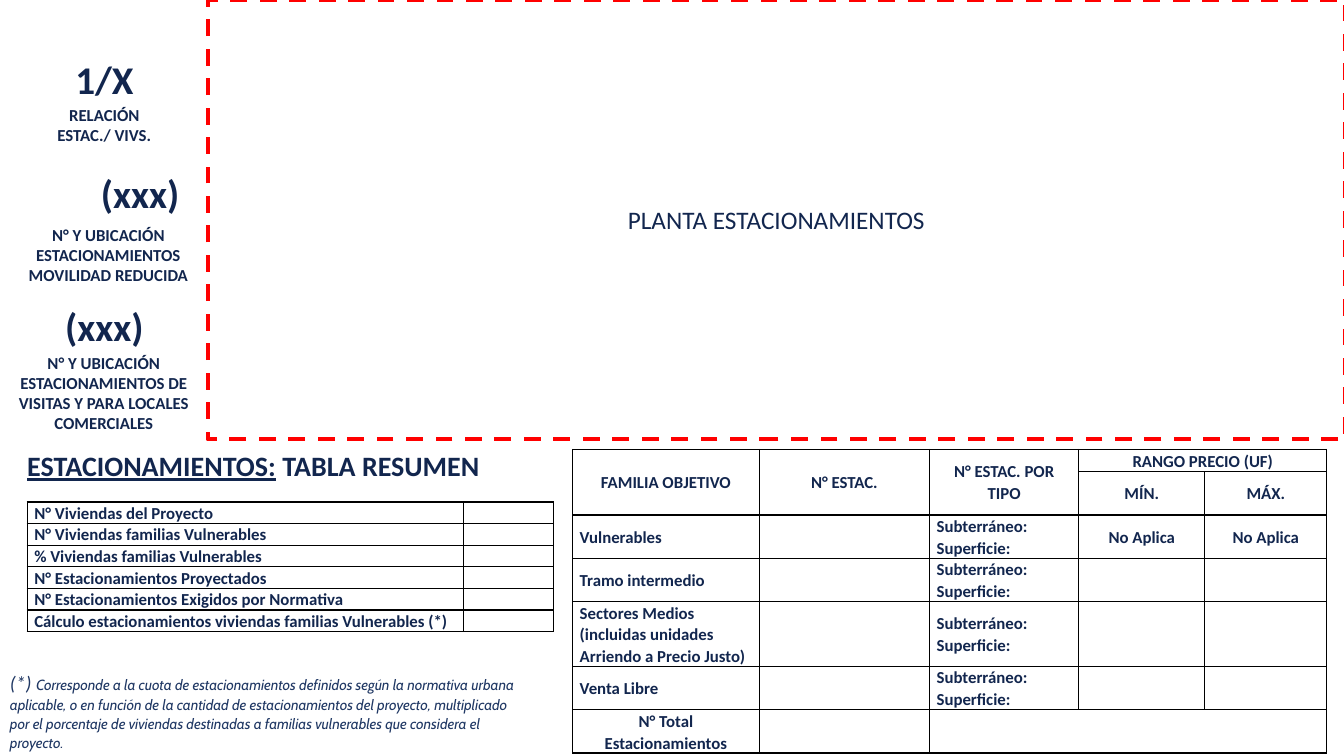
"""Builds the parking summary slide: indicators, floor plan area and two tables."""
import pptx
import pptx.dml.color
import pptx.enum.dml
import pptx.enum.shapes
import pptx.enum.text
import pptx.oxml
import pptx.oxml.ns
import pptx.util

Inches = pptx.util.Inches
Pt = pptx.util.Pt
ALIGN = pptx.enum.text.PP_ALIGN
ANCHOR = pptx.enum.text.MSO_ANCHOR
COLORS = {"navy": "12264E", "note": "203864", "red": "FF0000", "black": "000000"}
TYPES = "Subterráneo:\nSuperficie:"

INDICATORS = [
    ("1/X", (0.64, 0.5, 0.79, 0.57),
     "RELACIÓN\nESTAC./ VIVS.", (0.46, 0.99, 1.15, 0.5)),
    ("(xxx)", (0.7, 1.63, 1.38, 0.57),
     "N° Y UBICACIÓN ESTACIONAMIENTOS MOVILIDAD REDUCIDA", (0.17, 2.18, 1.81, 0.71)),
    ("(xxx)", (0.54, 2.95, 0.99, 0.57),
     "N° Y UBICACIÓN ESTACIONAMIENTOS DE VISITAS Y PARA LOCALES COMERCIALES",
     (0, 3.45, 2.06, 0.91)),
]
SUMMARY = [
    ["N° Viviendas del Proyecto", ""],
    ["N° Viviendas familias Vulnerables", ""],
    ["% Viviendas familias Vulnerables", ""],
    ["N° Estacionamientos Proyectados", ""],
    ["N° Estacionamientos Exigidos por Normativa", ""],
    ["Cálculo estacionamientos viviendas familias Vulnerables (*)", ""],
]
FAMILIES = [
    ["FAMILIA OBJETIVO", "N° ESTAC.", "N° ESTAC. POR TIPO", "RANGO PRECIO (UF)", ""],
    ["", "", "", "MÍN.", "MÁX."],
    ["Vulnerables", "", TYPES, "No Aplica", "No Aplica"],
    ["Tramo intermedio", "", TYPES, "", ""],
    ["Sectores Medios (incluidas unidades Arriendo a Precio Justo)", "", TYPES, "", ""],
    ["Venta Libre", "", TYPES, "", ""],
    ["N° Total Estacionamientos", "", "", "", ""],
]
NOTE = ("Corresponde a la cuota de estacionamientos definidos según la normativa urbana "
        "aplicable, o en función de la cantidad de estacionamientos del proyecto, "
        "multiplicado por el porcentaje de viviendas destinadas a familias vulnerables "
        "que considera el proyecto.")


def rgb(name):
    """Return the named colour."""
    return pptx.dml.color.RGBColor.from_string(COLORS[name])


def style_run(r, size, bold=False, italic=False, color="navy", font="Calibri"):
    """Format one run."""
    r.font.size = Pt(size)
    r.font.name = font
    r.font.bold = bold
    r.font.italic = italic
    r.font.color.rgb = rgb(color)


def write(tf, text, size, bold=False, align=ALIGN.CENTER, spacing=None):
    """Fill a text frame with evenly formatted paragraphs."""
    tf.text = text
    for p in tf.paragraphs:
        p.alignment = align
        p.line_spacing = spacing
        for r in p.runs:
            style_run(r, size, bold)


def add_label(slide, text, box, size):
    """Add a bold centred text box."""
    tf = slide.shapes.add_textbox(*map(Inches, box)).text_frame
    tf.word_wrap = True
    write(tf, text, size, bold=True)


def add_plan(slide):
    """Add the dashed floor plan area."""
    sp = slide.shapes.add_shape(pptx.enum.shapes.MSO_SHAPE.RECTANGLE,
                                Inches(2.06), Inches(0), Inches(11.28), Inches(4.36))
    sp.shadow.inherit = False
    sp.fill.background()
    sp.line.color.rgb = rgb("red")
    sp.line.width = Pt(3)
    sp.line.dash_style = pptx.enum.dml.MSO_LINE.DASH
    sp.text_frame.vertical_anchor = ANCHOR.MIDDLE
    write(sp.text_frame, "PLANTA ESTACIONAMIENTOS", 18)


def set_title(slide):
    """Place the title with its underlined first word."""
    sp = slide.shapes.title
    sp.left, sp.top, sp.width, sp.height = map(Inches, (0.17, 4.4, 6.02, 0.44))
    tf = sp.text_frame
    tf.auto_size = pptx.enum.text.MSO_AUTO_SIZE.NONE
    tf.vertical_anchor = ANCHOR.TOP
    p = tf.paragraphs[0]
    p.alignment = ALIGN.LEFT
    for text, underline in (("ESTACIONAMIENTOS:", True), (" TABLA RESUMEN", False)):
        r = p.add_run()
        r.text = text
        style_run(r, 20, bold=True)
        r.font.underline = underline


def add_note(slide):
    """Add the footnote."""
    tf = slide.shapes.add_textbox(*map(Inches, (0, 6.59, 5.32, 0.91))).text_frame
    tf.word_wrap = True
    p = tf.paragraphs[0]
    p.line_spacing = 1.07
    p.space_after = Pt(2)
    for text, size, font in (("(*) ", 14, "Calibri"), (NOTE, 10.5, "Cabin")):
        r = p.add_run()
        r.text = text
        style_run(r, size, italic=True, color="note", font=font)


def format_cell(cell, text, align, anchor):
    """Write a cell and give it thin black borders and no fill."""
    cell.margin_left = cell.margin_right = Inches(0.07)
    cell.margin_top = cell.margin_bottom = 0
    cell.vertical_anchor = anchor
    write(cell.text_frame, text, 12, bold=True, align=align, spacing=1.07)
    if not text:
        cell.text_frame.paragraphs[0]._p.get_or_add_endParaRPr().set("sz", "1200")
    cell.fill.background()
    tc_pr = cell._tc.get_or_add_tcPr()
    for i, side in enumerate("LRTB"):
        tc_pr.insert(i, pptx.oxml.parse_xml(
            f'<a:ln{side} {pptx.oxml.ns.nsdecls("a")} w="12700"><a:solidFill>'
            f'<a:srgbClr val="{COLORS["black"]}"/></a:solidFill></a:ln{side}>'))


def add_table(slide, left, top, widths, heights, rows, anchor, centred):
    """Add a bordered table; centred(row, column) picks the centred cells."""
    tbl = slide.shapes.add_table(len(rows), len(widths), Inches(left), Inches(top),
                                 Inches(sum(widths)), Inches(sum(heights))).table
    tbl.first_row = tbl.horz_banding = False
    for col, width in zip(tbl.columns, widths):
        col.width = Inches(width)
    for i, row in enumerate(rows):
        tbl.rows[i].height = Inches(heights[i])
        for j, text in enumerate(row):
            align = ALIGN.CENTER if centred(i, j) else ALIGN.LEFT
            format_cell(tbl.cell(i, j), text, align, anchor)
    return tbl


def main():
    """Build and save the slide."""
    prs = pptx.Presentation()
    prs.slide_width, prs.slide_height = Inches(13.33), Inches(7.5)
    slide = prs.slides.add_slide(prs.slide_layouts[5])
    add_plan(slide)
    for value, value_box, caption, caption_box in INDICATORS:
        add_label(slide, value, value_box, 28)
        add_label(slide, caption, caption_box, 12)
    set_title(slide)
    tbl = add_table(slide, 5.68, 4.46, [1.85, 1.69, 1.48, 1.25, 1.21],
                    [0.22, 0.43, 0.43, 0.43, 0.64, 0.43, 0.43], FAMILIES, ANCHOR.MIDDLE,
                    lambda i, j: i in (0, 1, 6) or j > 2)
    for j in range(3):
        tbl.cell(0, j).merge(tbl.cell(1, j))
    tbl.cell(0, 3).merge(tbl.cell(0, 4))
    tbl.cell(6, 2).merge(tbl.cell(6, 4))
    add_table(slide, 0.27, 4.98, [4.33, 0.89], [0.21] * len(SUMMARY), SUMMARY,
              ANCHOR.TOP, lambda i, j: False)
    add_note(slide)
    prs.save("out.pptx")


if __name__ == "__main__":
    main()
